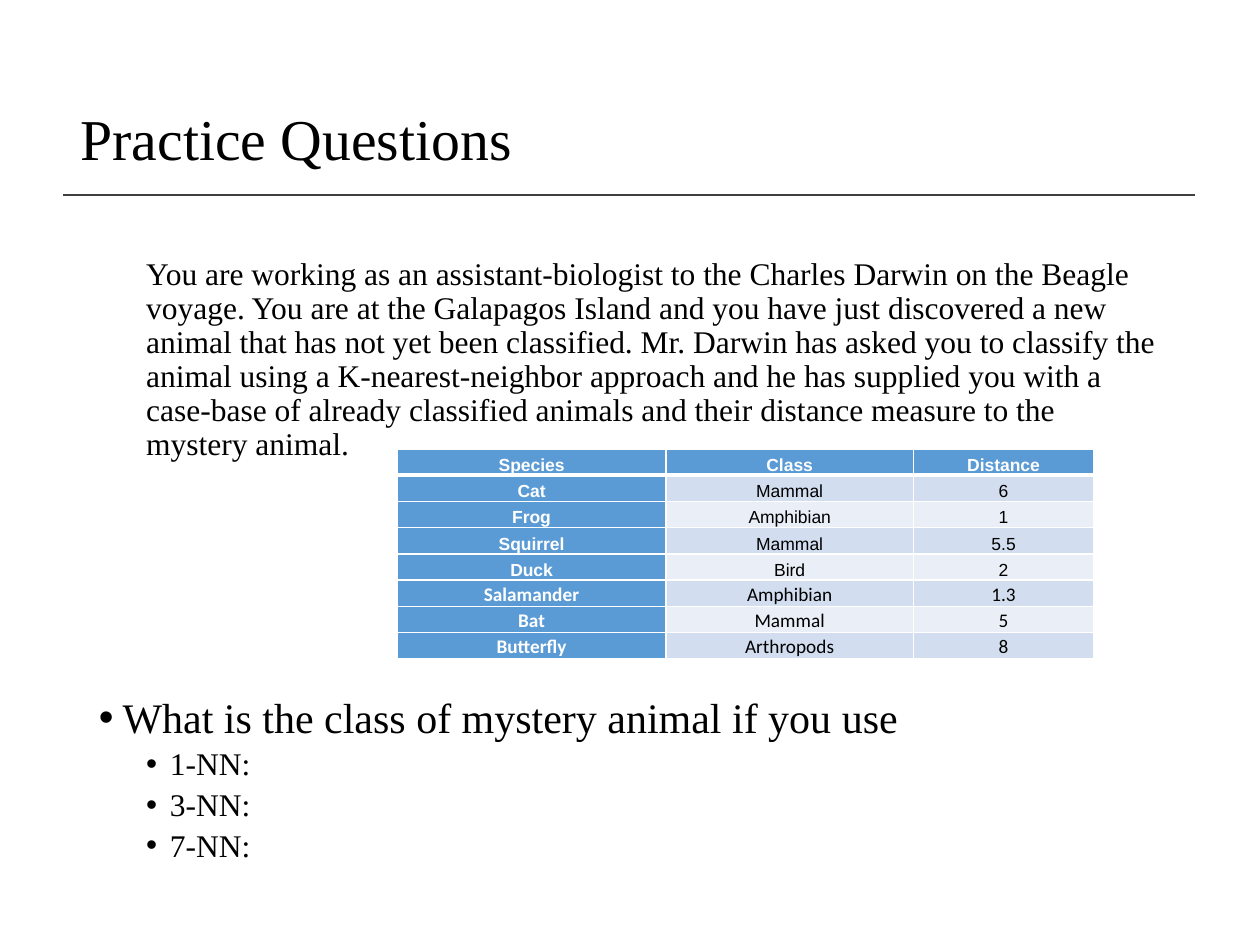
from dataclasses import dataclass

from lxml import etree
from pptx import Presentation
from pptx.dml.color import RGBColor
from pptx.enum.shapes import MSO_CONNECTOR
from pptx.enum.text import MSO_ANCHOR, PP_ALIGN
from pptx.oxml.ns import qn
from pptx.util import Pt

LINE = MSO_CONNECTOR.STRAIGHT
MID, TOP, LOW = MSO_ANCHOR.MIDDLE, MSO_ANCHOR.TOP, MSO_ANCHOR.BOTTOM
CENTER = PP_ALIGN.CENTER


@dataclass(frozen=True)
class Theme:
    ink: str = "000000"
    rule: str = "404040"
    white: str = "FFFFFF"
    head: str = "5B9BD5"
    bands: tuple = ("EAEFF7", "D2DEEF")
    serif: str = "Times New Roman"
    sans: tuple = ("Arial", 10)
    late: tuple = ("Calibri", 11)
    title: int = 33
    ask: int = 24
    text: int = 18


THEME = Theme()

INTRO = (
    "You are working as an assistant-biologist to the Charles Darwin on the Beagle "
    "voyage. You are at the Galapagos Island and you have just discovered a new "
    "animal that has not yet been classified. Mr. Darwin has asked you to classify "
    "the animal using a K-nearest-neighbor approach and he has supplied you with a "
    "case-base of already classified animals and their distance measure to the "
    "mystery animal."
)
# text, size, level, left margin, first-line indent, space before
BODY = [
    (INTRO, THEME.text, 1, 27, 0, 0),
    ("What is the class of mystery animal if you use", THEME.ask, 0, 13.5, -13.5, 134),
] + [(f"{k}-NN:", THEME.text, 1, 40.5, -13.5, 3.75) for k in (1, 3, 7)]

ROWS = [
    ("Species", "Class", "Distance"),
    ("Cat", "Mammal", "6"),
    ("Frog", "Amphibian", "1"),
    ("Squirrel", "Mammal", "5.5"),
    ("Duck", "Bird", "2"),
    ("Salamander", "Amphibian", "1.3"),
    ("Bat", "Mammal", "5"),
    ("Butterfly", "Arthropods", "8"),
]
LATE_ROW = 5
WIDTHS = (153.5, 141.5, 103)
ROW_H = 15


def put(item, **vals):
    for name, val in vals.items():
        setattr(item, name, val)


def style(font, face, size, color, bold=False):
    put(font, name=face, size=Pt(size), bold=bold)
    font.color.rgb = RGBColor.from_string(color)


def add_box(slide, area, anchor):
    frame = slide.shapes.add_textbox(*map(Pt, area)).text_frame
    put(frame, word_wrap=True, vertical_anchor=anchor)
    return frame


def add_title(slide, text):
    para = add_box(slide, (39, 29, 631.5, 104), MID).paragraphs[0]
    put(para, text=text, line_spacing=0.9)
    style(para.font, THEME.serif, THEME.title, THEME.ink)


def add_rule(slide):
    rule = slide.shapes.add_connector(LINE, Pt(36), Pt(111.5), Pt(683), Pt(111.5))
    rule.line.width = Pt(1)
    rule.line.color.rgb = RGBColor.from_string(THEME.rule)
    etree.SubElement(rule._element.spPr, qn("a:effectLst"))


def add_body(slide):
    frame = add_box(slide, (49.5, 144, 620.5, 378.5), TOP)
    for i, (text, size, level, left, dent, gap) in enumerate(BODY):
        para = frame.add_paragraph() if i else frame.paragraphs[0]
        put(para, text=text, level=level, line_spacing=0.9, space_before=Pt(gap))
        props = para._p.get_or_add_pPr()
        props.set("marL", str(Pt(left)))
        props.set("indent", str(Pt(dent)))
        if dent:
            etree.SubElement(props, qn("a:buFont"), typeface="Arial")
            etree.SubElement(props, qn("a:buChar"), char="•")
        style(para.font, THEME.serif, size, THEME.ink)


def add_edges(cell, row):
    """Draw white cell borders, thick between the header and the data."""
    thick = {(0, "B"), (1, "T")}
    props = cell._tc.get_or_add_tcPr()
    for side in "LRTB":
        width = Pt(3 if (row, side) in thick else 1)
        edge = etree.SubElement(props, qn(f"a:ln{side}"), w=str(width))
        fill = etree.SubElement(edge, qn("a:solidFill"))
        etree.SubElement(fill, qn("a:srgbClr"), val=THEME.white)


def fill_cell(cell, text, row, col):
    strong = row == 0 or col == 0
    add_edges(cell, row)
    cell.fill.solid()
    shade = THEME.head if strong else THEME.bands[row % 2]
    cell.fill.fore_color.rgb = RGBColor.from_string(shade)
    put(cell, margin_left=Pt(5), margin_right=Pt(5), margin_top=0,
        margin_bottom=0, vertical_anchor=LOW)
    para = cell.text_frame.paragraphs[0]
    put(para, text=text, alignment=CENTER, line_spacing=1.07)
    face, size = THEME.late if row >= LATE_ROW else THEME.sans
    style(para.runs[0].font, face, size, THEME.white if strong else THEME.ink, strong)


def add_grid(slide):
    area = (227, 256.5, sum(WIDTHS), ROW_H * len(ROWS))
    grid = slide.shapes.add_table(len(ROWS), len(WIDTHS), *map(Pt, area)).table
    for col, width in zip(grid.columns, WIDTHS):
        col.width = Pt(width)
    for r, row in enumerate(ROWS):
        grid.rows[r].height = Pt(ROW_H)
        for c, text in enumerate(row):
            fill_cell(grid.cell(r, c), text, r, c)


def main():
    deck = Presentation()
    put(deck, slide_width=Pt(720), slide_height=Pt(540))
    slide = deck.slides.add_slide(deck.slide_layouts[6])
    add_rule(slide)
    add_title(slide, "Practice Questions")
    add_body(slide)
    add_grid(slide)
    deck.save("out.pptx")


if __name__ == "__main__":
    main()
